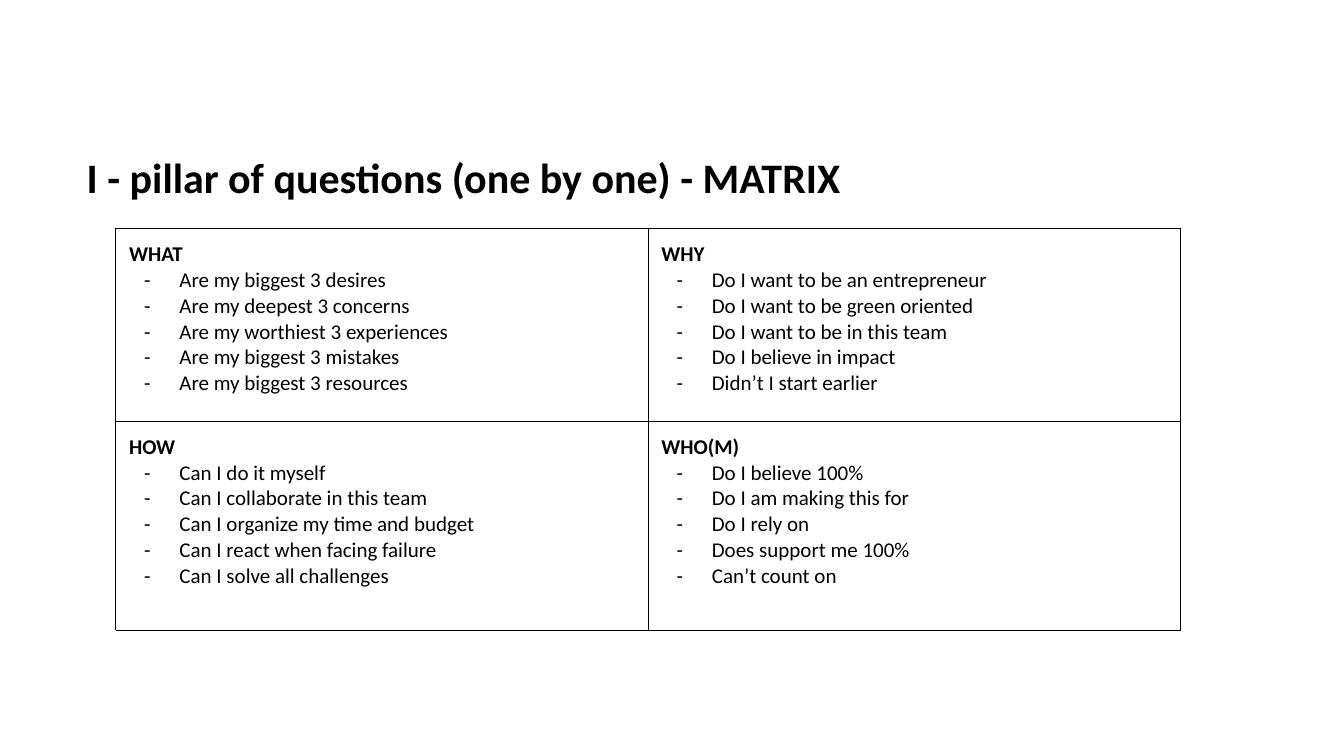
from lxml.etree import SubElement
from pptx import Presentation
from pptx.dml.color import RGBColor
from pptx.enum.text import MSO_ANCHOR, PP_ALIGN
from pptx.oxml.ns import qn
from pptx.util import Inches, Pt

TITLE = "I - pillar of questions (one by one) - MATRIX"
MATRIX = [
    [
        ("WHAT", ["Are my biggest 3 desires", "Are my deepest 3 concerns",
                  "Are my worthiest 3 experiences", "Are my biggest 3 mistakes",
                  "Are my biggest 3 resources"]),
        ("WHY", ["Do I want to be an entrepreneur", "Do I want to be green oriented",
                 "Do I want to be in this team", "Do I believe in impact",
                 "Didn’t I start earlier"]),
    ],
    [
        ("HOW", ["Can I do it myself", "Can I collaborate in this team",
                 "Can I organize my time and budget", "Can I react when facing failure",
                 "Can I solve all challenges"]),
        ("WHO(M)", ["Do I believe 100%", "Do I am making this for", "Do I rely on",
                    "Does support me 100%", "Can’t count on"]),
    ],
]
THEME = {"font": "Calibri", "ink": "000000", "title": Pt(30), "body": Pt(15), "rule": Pt(0.75)}
TITLE_BOX = {"left": 0.73, "top": 1.43, "width": 12.42, "height": 0.84}
TABLE_LEFT, TABLE_TOP, COLUMN_WIDTH = 1.15, 2.27, 5.28
ROW_HEIGHTS = [1.91, 2.07]
INSET, INDENT, HANGING = Inches(0.13), Inches(0.5), Inches(-0.35)
SIDES = ("left", "right", "top", "bottom")


def set_attributes(target, values):
    """Set each named attribute on the target."""
    for name, value in values.items():
        setattr(target, name, value)


def write(p, text, size, bold):
    """Write one styled run into a paragraph."""
    r = p.add_run()
    r.text = text
    set_attributes(r.font, {"name": THEME["font"], "size": size, "bold": bold})
    r.font.color.rgb = RGBColor.from_string(THEME["ink"])


def add_dash(p):
    """Give a paragraph a hanging dash bullet."""
    pPr = p._p.get_or_add_pPr()
    pPr.set("marL", str(INDENT))
    pPr.set("indent", str(HANGING))
    SubElement(pPr, qn("a:buFont"), typeface=THEME["font"])
    SubElement(pPr, qn("a:buChar"), char="-")


def add_borders(cell):
    """Draw a solid line on all four sides of a cell."""
    tcPr = cell._tc.get_or_add_tcPr()
    for position, side in enumerate(("a:lnL", "a:lnR", "a:lnT", "a:lnB")):
        line = SubElement(tcPr, qn(side), w=str(THEME["rule"]))
        fill = SubElement(line, qn("a:solidFill"))
        SubElement(fill, qn("a:srgbClr"), val=THEME["ink"])
        tcPr.insert(position, line)


def fill_cell(cell, heading, questions):
    """Write a heading and its dashed questions into a cell."""
    cell.fill.background()
    set_attributes(cell, {f"margin_{side}": INSET for side in SIDES})
    cell.vertical_anchor = MSO_ANCHOR.TOP
    add_borders(cell)
    tf = cell.text_frame
    write(tf.paragraphs[0], heading, THEME["body"], True)
    for question in questions:
        p = tf.add_paragraph()
        add_dash(p)
        write(p, question, THEME["body"], False)


def add_title(slide):
    """Place and format the slide title."""
    title = slide.shapes.title
    set_attributes(title, {name: Inches(value) for name, value in TITLE_BOX.items()})
    tf = title.text_frame
    set_attributes(tf, {f"margin_{side}": INSET for side in SIDES})
    set_attributes(tf, {"vertical_anchor": MSO_ANCHOR.TOP, "word_wrap": True})
    p = tf.paragraphs[0]
    set_attributes(p, {"alignment": PP_ALIGN.LEFT, "line_spacing": 0.9})
    write(p, TITLE, THEME["title"], True)


def add_matrix(slide):
    """Build the table of questions."""
    rows, columns = len(MATRIX), len(MATRIX[0])
    table = slide.shapes.add_table(
        rows, columns, Inches(TABLE_LEFT), Inches(TABLE_TOP),
        Inches(columns * COLUMN_WIDTH), Inches(sum(ROW_HEIGHTS))).table
    set_attributes(table, {"first_row": False, "horz_banding": False})
    for column in table.columns:
        column.width = Inches(COLUMN_WIDTH)
    for i, (height, quadrants) in enumerate(zip(ROW_HEIGHTS, MATRIX)):
        table.rows[i].height = Inches(height)
        for j, (heading, questions) in enumerate(quadrants):
            fill_cell(table.cell(i, j), heading, questions)


def main():
    """Build and save the slide."""
    prs = Presentation()
    set_attributes(prs, {"slide_width": Inches(13.33), "slide_height": Inches(7.5)})
    slide = prs.slides.add_slide(prs.slide_layouts[5])
    add_title(slide)
    add_matrix(slide)
    prs.save("out.pptx")


if __name__ == "__main__":
    main()
